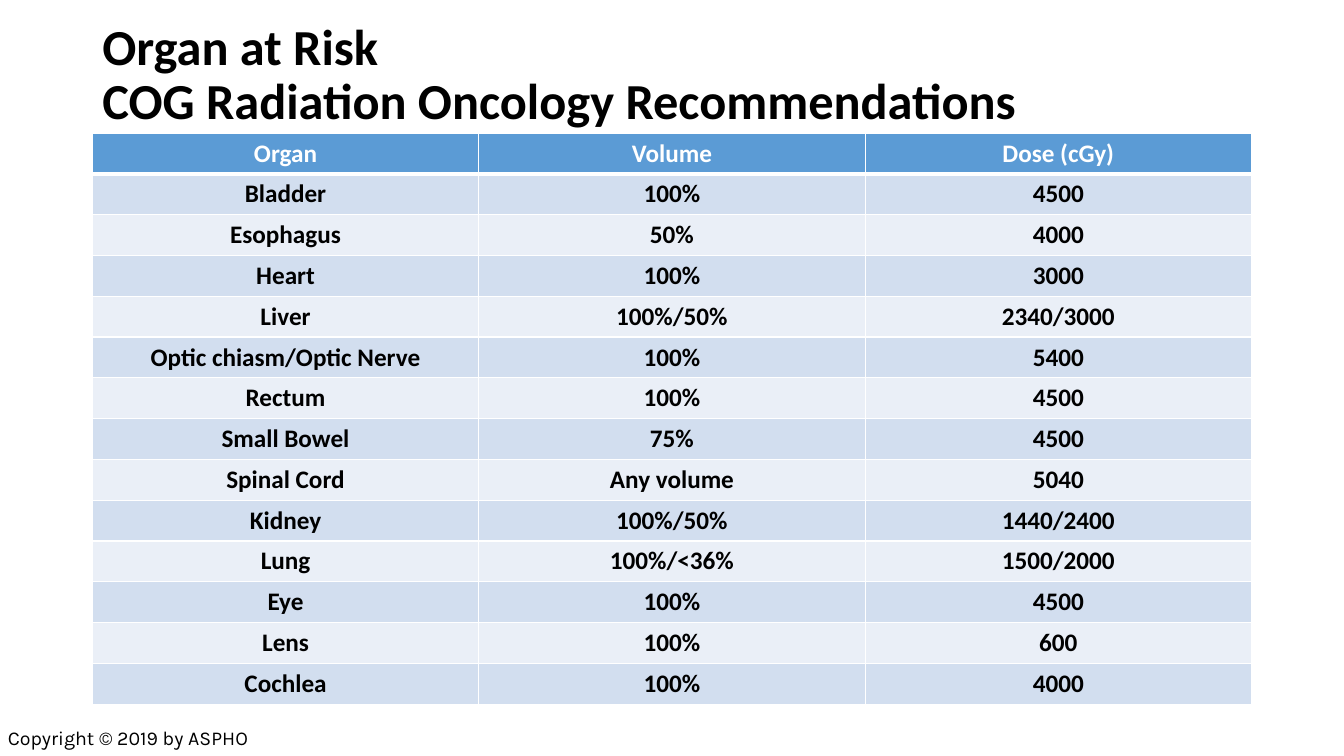
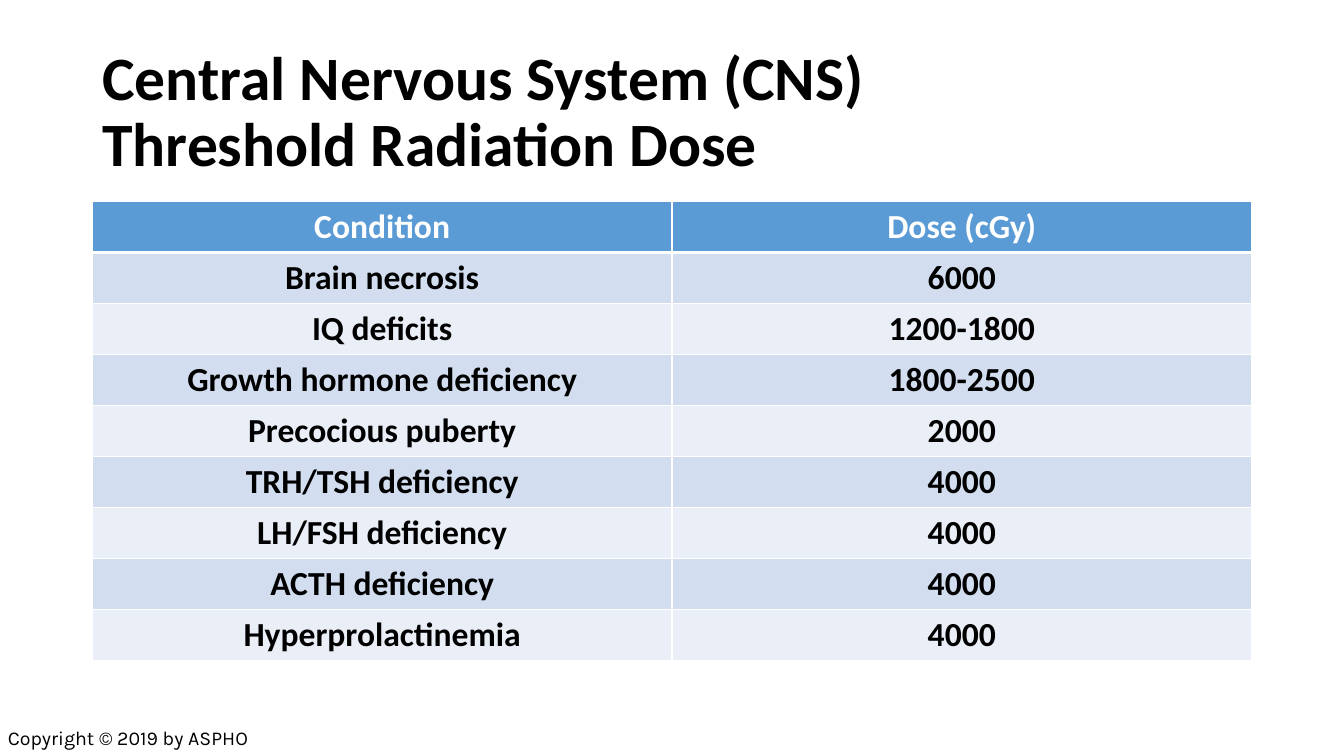
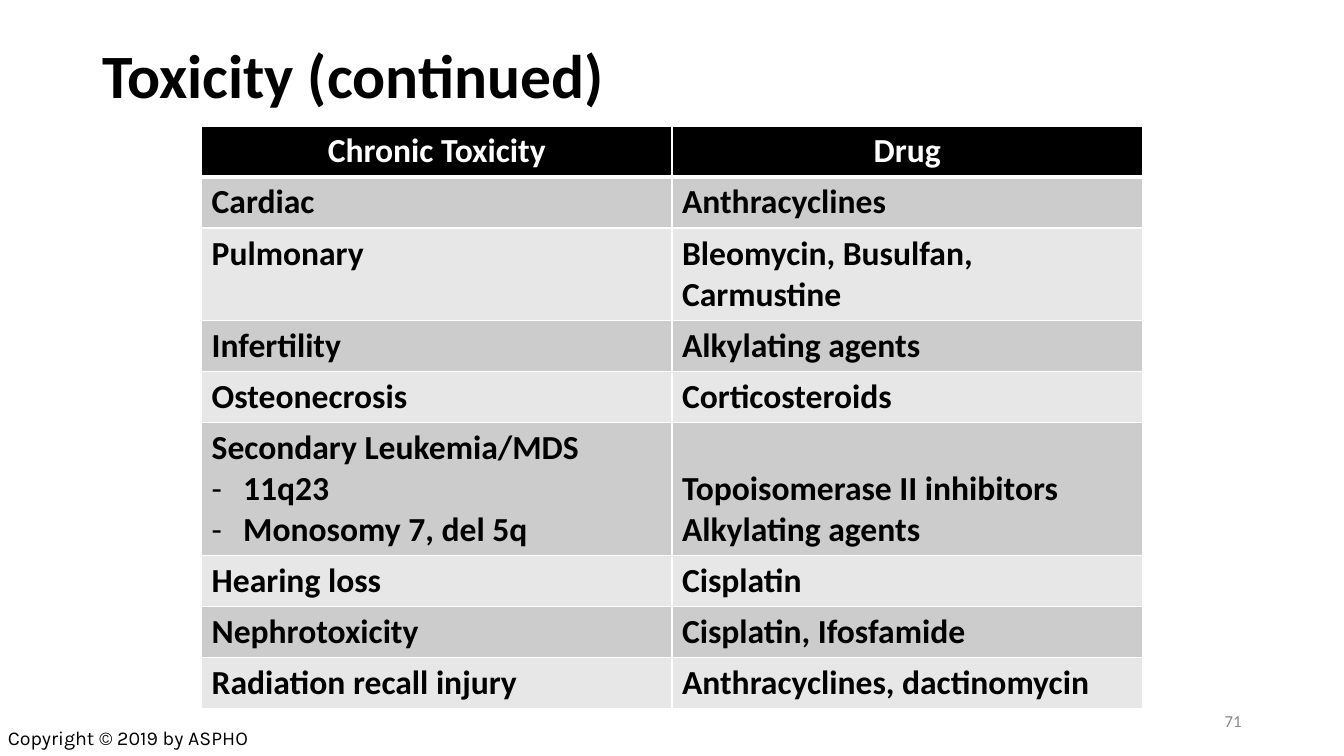
from lxml import etree
from pptx import Presentation
from pptx import util as u
from pptx.dml.color import RGBColor
from pptx.enum import text
from pptx.oxml import ns

BLACK, WHITE, GREY = "000000", "FFFFFF", "898989"
# header fill, odd body rows, even body rows
BLUE_BANDS = ("5B9BD5", "D2DEEF", "EAEFF7")
GREY_BANDS = ("000000", "CCCCCC", "E7E7E7")
BODY_FONT, FOOTER_FONT = "Calibri", "Karla"
LEFT, WIDTH = 66, 828
LINE_HEIGHT, CELL_PADDING = 1.22, 7.2
DASH_INDENT = 22.5
CENTER, RIGHT = text.PP_ALIGN.CENTER, text.PP_ALIGN.RIGHT
TOP, MIDDLE, BOTTOM = text.MSO_ANCHOR.TOP, text.MSO_ANCHOR.MIDDLE, text.MSO_ANCHOR.BOTTOM

ORGANS = [
    ("Organ", "Volume", "Dose (cGy)"),
    ("Bladder", "100%", "4500"),
    ("Esophagus", "50%", "4000"),
    ("Heart", "100%", "3000"),
    ("Liver", "100%/50%", "2340/3000"),
    ("Optic chiasm/Optic Nerve", "100%", "5400"),
    ("Rectum", "100%", "4500"),
    ("Small Bowel", "75%", "4500"),
    ("Spinal Cord", "Any volume", "5040"),
    ("Kidney", "100%/50%", "1440/2400"),
    ("Lung", "100%/<36%", "1500/2000"),
    ("Eye", "100%", "4500"),
    ("Lens", "100%", "600"),
    ("Cochlea", "100%", "4000"),
]
CNS_DOSES = [
    ("Condition", "Dose (cGy)"),
    ("Brain necrosis", "6000"),
    ("IQ deficits", "1200-1800"),
    ("Growth hormone deficiency", "1800-2500"),
    ("Precocious puberty", "2000"),
    ("TRH/TSH deficiency", "4000"),
    ("LH/FSH deficiency", "4000"),
    ("ACTH deficiency", "4000"),
    ("Hyperprolactinemia", "4000"),
]
TOXICITIES = [
    ("Chronic Toxicity", "Drug"),
    ("Cardiac", "Anthracyclines"),
    ("Pulmonary", "Bleomycin, Busulfan, Carmustine"),
    ("Infertility", "Alkylating agents"),
    ("Osteonecrosis", "Corticosteroids"),
    ("Secondary Leukemia/MDS\n- 11q23\n- Monosomy 7, del 5q",
     "Topoisomerase II inhibitors\nAlkylating agents"),
    ("Hearing loss", "Cisplatin"),
    ("Nephrotoxicity", "Cisplatin, Ifosfamide"),
    ("Radiation recall injury", "Anthracyclines, dactinomycin"),
]
TOXICITY_LINES = {2: 2, 5: 3}


def color(value):
    return RGBColor.from_string(value)


def style_runs(para, size, ink, bold=False, font=BODY_FONT):
    for span in para.runs:
        span.font.name = font
        span.font.size = u.Pt(size)
        span.font.bold = bold
        span.font.color.rgb = color(ink)


def add_text(page, area, words, size, ink=BLACK, bold=False, font=BODY_FONT,
             align=None, anchor=TOP, spacing=None):
    frame = page.shapes.add_textbox(*map(u.Pt, area)).text_frame
    frame.word_wrap = True
    frame.vertical_anchor = anchor
    para = frame.paragraphs[0]
    para.text = words
    para.alignment = align
    para.line_spacing = spacing
    style_runs(para, size, ink, bold, font)


def add_page(deck, title, top, size, anchor=MIDDLE):
    """Add a blank page with the shared title style and copyright footer."""
    page = deck.slides.add_slide(deck.slide_layouts[6])
    add_text(page, (LEFT, top, WIDTH, 104.4), title, size, bold=True,
             anchor=anchor, spacing=0.9)
    add_text(page, (-1.5, 514.8, 244.8, 24.5), "Copyright © 2019 by ASPHO", 14,
             font=FOOTER_FONT)
    return page


def set_borders(cell, top, bottom):
    """Draw white cell borders; they must precede the fill in the XML."""
    props = cell._tc.get_or_add_tcPr()
    for side, width in (("L", 1), ("R", 1), ("T", top), ("B", bottom)):
        line = etree.SubElement(props, ns.qn(f"a:ln{side}"), w=str(u.Pt(width)))
        fill = etree.SubElement(line, ns.qn("a:solidFill"))
        etree.SubElement(fill, ns.qn("a:srgbClr"), val=WHITE)


def add_dash(para):
    props = para._p.get_or_add_pPr()
    props.set("marL", str(u.Pt(DASH_INDENT)))
    props.set("indent", str(u.Pt(-DASH_INDENT)))
    etree.SubElement(props, ns.qn("a:buFont"), typeface=BODY_FONT)
    etree.SubElement(props, ns.qn("a:buChar"), char="-")


def fill_cell(cell, words, size, ink, align):
    """Write one paragraph per line; lines starting with a dash become bullets."""
    cell.text_frame.text = words
    for para in cell.text_frame.paragraphs:
        if para.text.startswith("- "):
            add_dash(para)
            para.text = para.text[2:]
        para.alignment = align
        style_runs(para, size, ink, bold=True)


def add_grid(page, rows, left, top, width, size, bands, body_align=None, tall_rows=None):
    """Add a banded table; tall_rows maps a row index to its number of text lines."""
    tall_rows = tall_rows or {}
    heights = [CELL_PADDING + LINE_HEIGHT * size * tall_rows.get(index, 1)
               for index in range(len(rows))]
    area = (left, top, width, sum(heights))
    table = page.shapes.add_table(len(rows), len(rows[0]), *map(u.Pt, area)).table
    table.first_row = table.horz_banding = False
    for index, row in enumerate(rows):
        table.rows[index].height = u.Pt(heights[index])
        header = index == 0
        band = bands[0] if header else bands[2 - index % 2]
        for column, words in enumerate(row):
            cell = table.cell(index, column)
            set_borders(cell, 3 if index == 1 else 1, 3 if header else 1)
            cell.fill.solid()
            cell.fill.fore_color.rgb = color(band)
            fill_cell(cell, words, size, WHITE if header else BLACK,
                      CENTER if header else body_align)
    return table


def main():
    deck = Presentation()
    deck.slide_width, deck.slide_height = u.Pt(960), u.Pt(540)

    page = add_page(deck, "Organ at Risk\nCOG Radiation Oncology Recommendations", 2.2, 36)
    add_grid(page, ORGANS, LEFT, 95, WIDTH, 18, BLUE_BANDS, CENTER)

    page = add_page(deck, "Central Nervous System (CNS)\nThreshold Radiation Dose", 28.8, 44)
    add_grid(page, CNS_DOSES, LEFT, 144, WIDTH, 24, BLUE_BANDS, CENTER)

    page = add_page(deck, "Toxicity (continued)", 28.8, 44, TOP)
    table = add_grid(page, TOXICITIES, 144, 90, 672, 24, GREY_BANDS,
                     tall_rows=TOXICITY_LINES)
    # The two drugs line up with the two bulleted findings beside them
    table.cell(5, 1).vertical_anchor = BOTTOM
    add_text(page, (678, 500.4, 216, 28.8), "71", 12, GREY, align=RIGHT, anchor=MIDDLE)

    deck.save("out.pptx")


if __name__ == "__main__":
    main()
